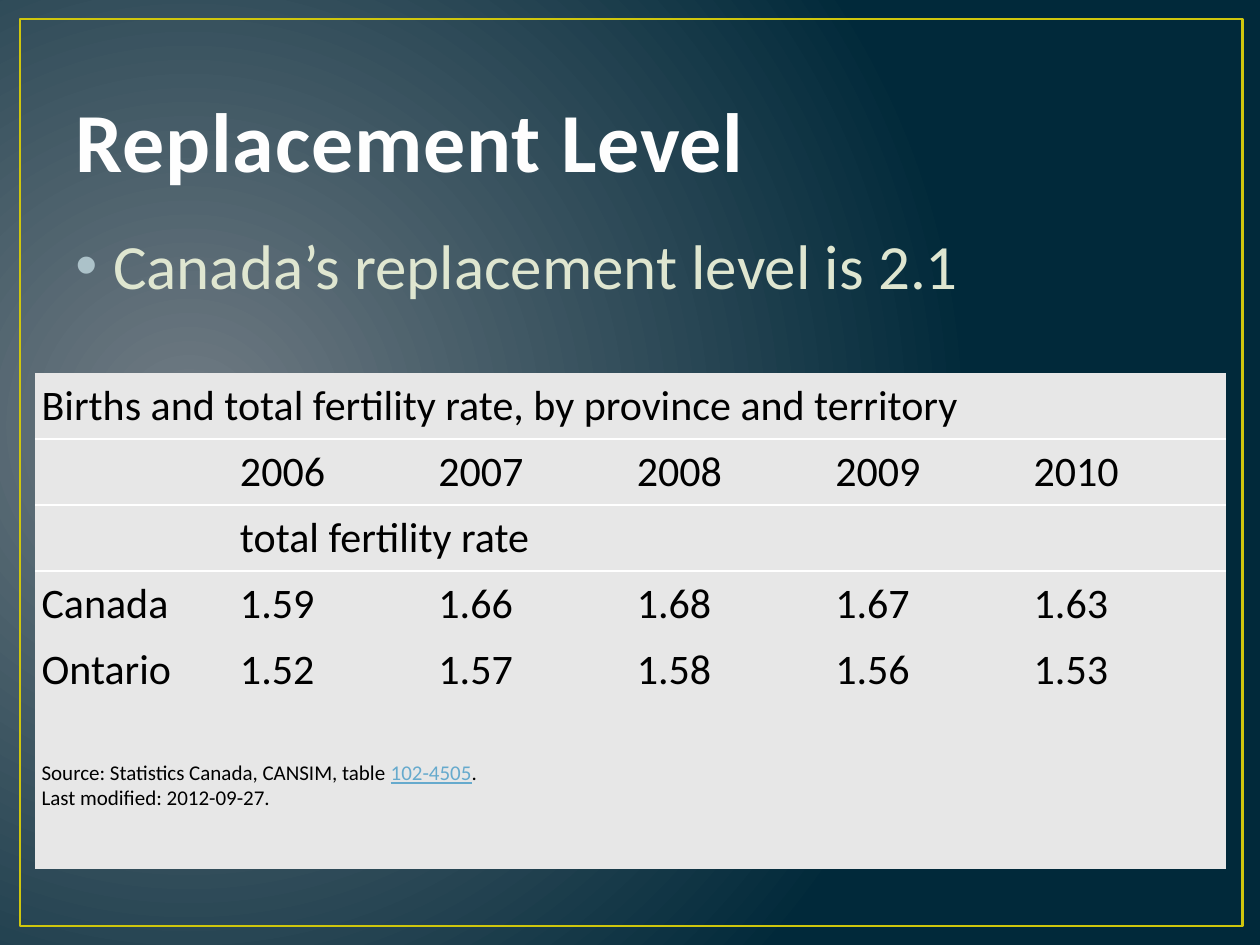
"""Build the Replacement Level slide with its fertility rate table."""
import lxml.etree
import pptx
import pptx.dml.color
import pptx.enum.shapes
import pptx.enum.text
import pptx.oxml.ns
import pptx.util

Inches = pptx.util.Inches
Pt = pptx.util.Pt
qn = pptx.oxml.ns.qn
SubElement = lxml.etree.SubElement


def color(value):
    return pptx.dml.color.RGBColor.from_string(value)


def add_run(paragraph, text, size, fill, **formats):
    run = paragraph.add_run()
    run.text = text
    run.font.color.rgb = color(fill)
    for name, value in {"name": "Calibri", "size": Pt(size), **formats}.items():
        setattr(run.font, name, value)
    return run


presentation = pptx.Presentation()
presentation.slide_width = Inches(10)
presentation.slide_height = Inches(7.5)
slide = presentation.slides.add_slide(presentation.slide_layouts[5])

background = slide.background.fill
background.gradient()
for stop, value in zip(background.gradient_stops, ("717C84", "01293A")):
    stop.color.rgb = color(value)
gradient = slide.element.find(".//" + qn("a:gradFill"))
gradient.remove(gradient.find(qn("a:lin")))
focus = SubElement(gradient, qn("a:path"), {"path": "circle"})
SubElement(focus, qn("a:fillToRect"), {"l": "15000", "t": "50000", "r": "85000", "b": "60000"})

frame = slide.shapes.add_shape(
    pptx.enum.shapes.MSO_SHAPE.RECTANGLE, Inches(0.16), Inches(0.15), Inches(9.7), Inches(7.2)
)
frame.shadow.inherit = False
frame.fill.background()
frame.line.color.rgb = color("CFC60D")
frame.line.width = Pt(1.5)

title = slide.shapes.title
title_place = {"left": 0.5, "top": 0.3, "width": 9, "height": 1.25}
for name, value in title_place.items():
    setattr(title, name, Inches(value))
title.text_frame.vertical_anchor = pptx.enum.text.MSO_ANCHOR.BOTTOM
paragraph = title.text_frame.paragraphs[0]
paragraph.alignment = pptx.enum.text.PP_ALIGN.LEFT
run = add_run(paragraph, "Replacement Level", 48, "FEFEFE", bold=True)
properties = run.font._element if hasattr(run.font, "_element") else run._r.get_or_add_rPr()
properties.set("spc", "50")
outline = lxml.etree.Element(qn("a:ln"), {"w": str(Pt(1.05))})
SubElement(SubElement(outline, qn("a:solidFill")), qn("a:srgbClr"), {"val": "384F55"})
properties.insert(0, outline)

body = slide.shapes.add_textbox(Inches(0.5), Inches(1.75), Inches(9), Inches(0.9))
body.text_frame.word_wrap = True
paragraph = body.text_frame.paragraphs[0]
add_run(paragraph, "Canada’s replacement level is 2.1", 36, "DFE6D0")
properties = paragraph._p.get_or_add_pPr()
properties.set("marL", str(Inches(0.3)))
properties.set("indent", str(-Inches(0.3)))
SubElement(SubElement(properties, qn("a:buClr")), qn("a:srgbClr"), {"val": "ACC2C9"})
SubElement(properties, qn("a:buFont"), {"typeface": "Arial"})
SubElement(properties, qn("a:buChar"), {"char": "•"})

rows = [
    ["Births and total fertility rate, by province and territory"],
    ["", "2006", "2007", "2008", "2009", "2010"],
    ["", "total fertility rate"],
    ["Canada", "1.59", "1.66", "1.68", "1.67", "1.63"],
    ["Ontario", "1.52", "1.57", "1.58", "1.56", "1.53"],
    [""],
]
graphic = slide.shapes.add_table(
    len(rows), 6, Inches(0.28), Inches(2.96), Inches(9.45), Inches(3.94)
)
table = graphic.table
table.first_row = False
table.horz_banding = False
table._tbl.tblPr.find(qn("a:tableStyleId")).text = "{2D5ABB26-0587-4C30-8999-92F81FD0307C}"
source_height = Inches(1.32)
for row in table.rows:
    row.height = (Inches(3.94) - source_height) // 5
table.rows[5].height = source_height

cell_format = {
    "vertical_anchor": pptx.enum.text.MSO_ANCHOR.MIDDLE,
    "margin_left": Inches(0.05),
    "margin_right": Inches(0.05),
    "margin_top": Inches(0.02),
    "margin_bottom": Inches(0.02),
}
ruled_sides = {0: ["a:lnB"], 1: ["a:lnT", "a:lnB"], 2: ["a:lnT"]}
for row_index, texts in enumerate(rows):
    for column_index in range(6):
        cell = table.cell(row_index, column_index)
        for name, value in cell_format.items():
            setattr(cell, name, value)
        for side in ruled_sides.get(row_index, []):
            border = SubElement(cell._tc.get_or_add_tcPr(), qn(side), {"w": str(Pt(1))})
            SubElement(SubElement(border, qn("a:solidFill")), qn("a:srgbClr"), {"val": "FFFFFF"})
        cell.fill.solid()
        cell.fill.fore_color.rgb = color("E7E7E7")
        if column_index < len(texts) and texts[column_index]:
            add_run(cell.text_frame.paragraphs[0], texts[column_index], 24, "000000")
    if len(texts) < 6:
        table.cell(row_index, len(texts) - 1).merge(table.cell(row_index, 5))

paragraph = table.cell(5, 0).text_frame.paragraphs[0]
add_run(paragraph, "Source: Statistics Canada, CANSIM, table ", 12, "000000")
add_run(paragraph, "102-4505", 12, "66AACD", underline=True)
add_run(paragraph, ".", 12, "000000")
paragraph.add_line_break()
add_run(paragraph, "Last modified: 2012-09-27.", 12, "000000")

presentation.save("out.pptx")
